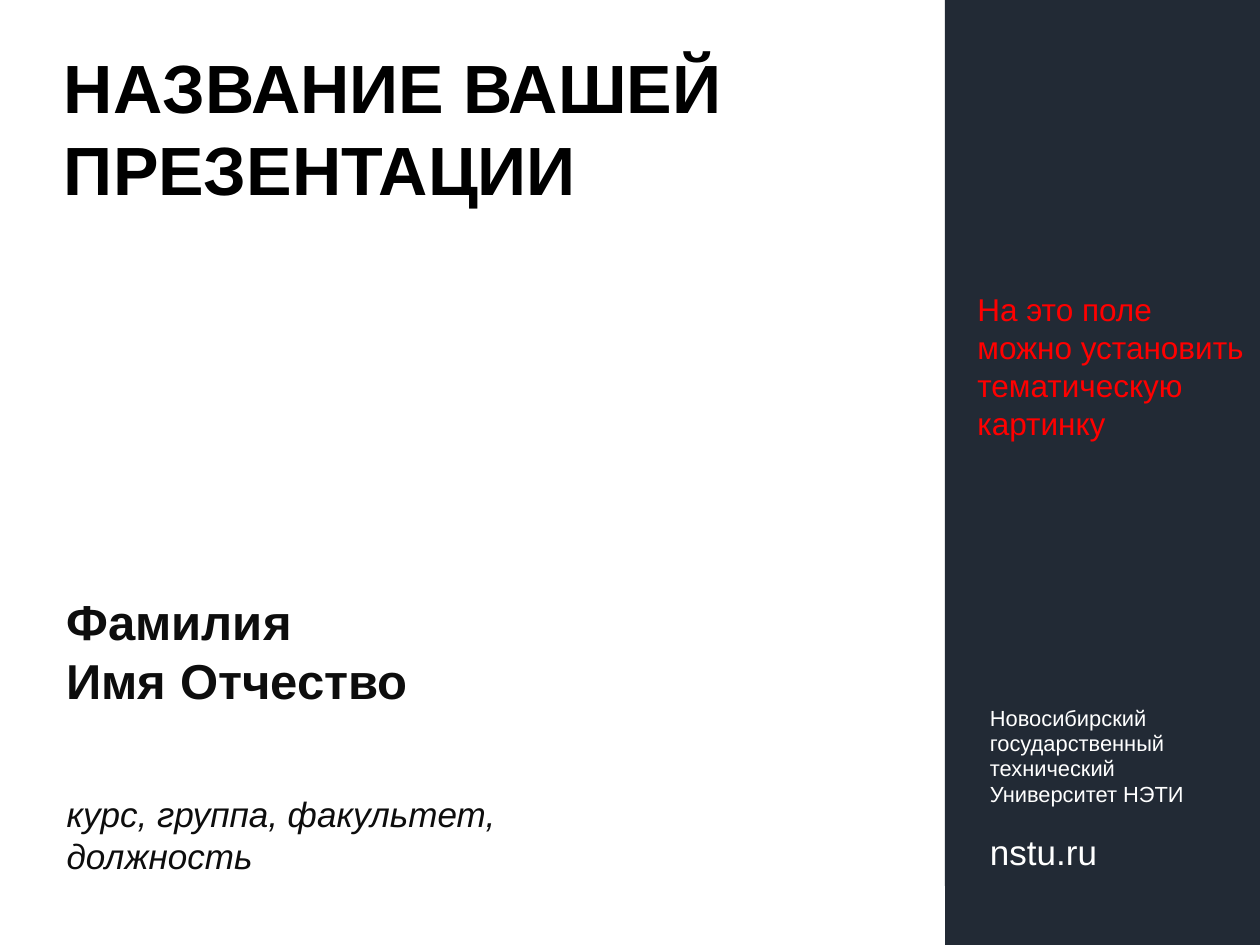
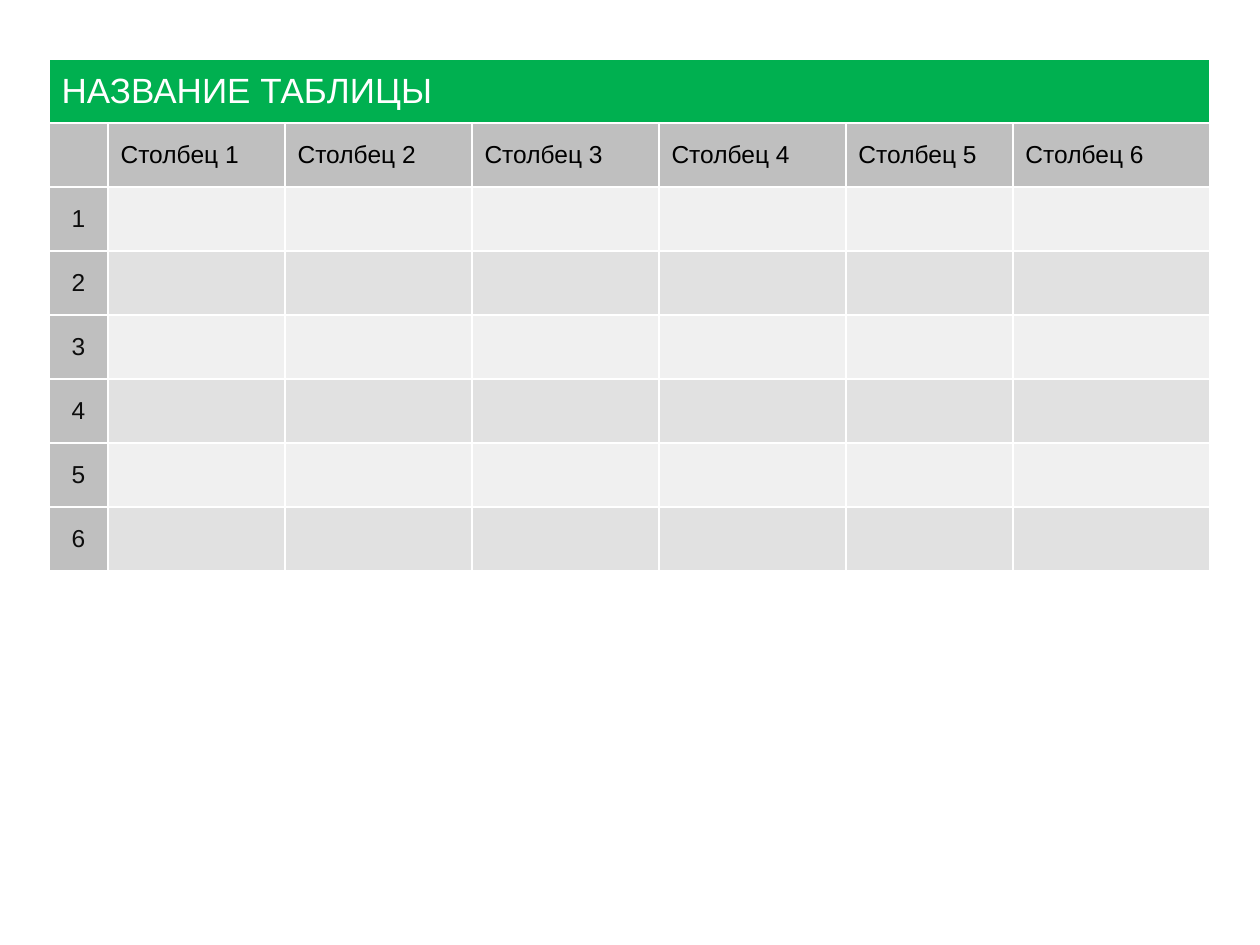
import lxml.etree
import pptx
import pptx.dml.color
import pptx.enum.shapes
import pptx.enum.text
import pptx.oxml.ns
import pptx.util

WHITE = pptx.dml.color.RGBColor(0xFF, 0xFF, 0xFF)
BLACK = pptx.dml.color.RGBColor(0x00, 0x00, 0x00)
INK = pptx.dml.color.RGBColor(0x0D, 0x0D, 0x0D)
NAVY = pptx.dml.color.RGBColor(0x22, 0x2A, 0x35)
RED = pptx.dml.color.RGBColor(0xFF, 0x00, 0x00)
GREEN = pptx.dml.color.RGBColor(0x00, 0xB0, 0x50)
HEADING_GREY = pptx.dml.color.RGBColor(0xBF, 0xBF, 0xBF)
ROW_GREYS = [
    pptx.dml.color.RGBColor(0xF0, 0xF0, 0xF0),
    pptx.dml.color.RGBColor(0xE1, 0xE1, 0xE1),
]
FONT = "Arial"
PX_PER_INCH = 126
TOP = pptx.enum.text.MSO_ANCHOR.TOP
LEFT = pptx.enum.text.PP_ALIGN.LEFT
CENTER = pptx.enum.text.PP_ALIGN.CENTER


def px(length):
    return pptx.util.Emu(round(length * 914400 / PX_PER_INCH))


def write(frame, text, size, colour, bold=False, align=LEFT):
    frame.text = text
    for paragraph in frame.paragraphs:
        paragraph.alignment = align
        for run in paragraph.runs:
            run.font.name = FONT
            run.font.size = pptx.util.Pt(size)
            run.font.bold = bold
            run.font.color.rgb = colour


deck = pptx.Presentation()
deck.slide_width = px(1260)
deck.slide_height = px(945)

cover = deck.slides.add_slide(deck.slide_layouts[1])
title, author = cover.placeholders
for placeholder, box in [(title, (64, 39, 742, 205)), (author, (54, 585, 620, 301))]:
    placeholder.left, placeholder.top, placeholder.width, placeholder.height = map(px, box)
    placeholder.text_frame.vertical_anchor = TOP
    placeholder.text_frame.auto_size = pptx.enum.text.MSO_AUTO_SIZE.NONE

write(title.text_frame, "НАЗВАНИЕ ВАШЕЙ ПРЕЗЕНТАЦИИ", 39, BLACK, bold=True)
title.text_frame.margin_left = 0

write(author.text_frame, "Фамилия\nИмя Отчество\nкурс, группа, факультет, должность", 28, INK, bold=True)
for paragraph in author.text_frame.paragraphs:
    properties = paragraph._p.get_or_add_pPr()
    properties.set("marL", "0")
    properties.set("indent", "0")
    lxml.etree.SubElement(properties, pptx.oxml.ns.qn("a:buNone"))
    paragraph.space_before = pptx.util.Pt(0)
position = author.text_frame.paragraphs[-1]
position.space_before = pptx.util.Pt(48)
position.runs[0].font.size = pptx.util.Pt(20)
position.runs[0].font.bold = False
position.runs[0].font.italic = True

for box, colour in [((945, 0, 315, 945), NAVY), ((0, 886, 945, 59), WHITE)]:
    band = cover.shapes.add_shape(pptx.enum.shapes.MSO_SHAPE.RECTANGLE, *map(px, box))
    band.shadow.inherit = False
    band.fill.solid()
    band.fill.fore_color.rgb = colour
    band.line.fill.background()

university = cover.shapes.add_textbox(px(990), px(703), px(217), px(195)).text_frame
university.word_wrap = True
university.margin_left = 0
write(university, "Новосибирский\nгосударственный\nтехнический\nУниверситет НЭТИ\nnstu.ru", 12.5, WHITE)
for paragraph in university.paragraphs:
    paragraph.line_spacing = 0.8
for paragraph in university.paragraphs[1:]:
    paragraph.space_before = pptx.util.Pt(2.5)
website = university.paragraphs[-1]
website.space_before = pptx.util.Pt(18.5)
website.runs[0].font.size = pptx.util.Pt(20)

hint = cover.shapes.add_textbox(px(965), px(284), px(295), px(165)).text_frame
hint.word_wrap = False
write(hint, "На это поле\nможно установить\nтематическую\nкартинку", 18, RED)

table_slide = deck.slides.add_slide(deck.slide_layouts[6])
column_widths = [59, 177, 187, 187, 187, 167, 197]
row_count, row_height = 8, 64
table = table_slide.shapes.add_table(
    row_count, len(column_widths), px(49), px(59), px(sum(column_widths)), px(row_count * row_height)
).table
for column, width in zip(table.columns, column_widths):
    column.width = px(width)
for row in table.rows:
    row.height = px(row_height)

for r in range(row_count):
    for c in range(len(column_widths)):
        cell = table.cell(r, c)
        cell.vertical_anchor = pptx.enum.text.MSO_ANCHOR.MIDDLE
        for side in ("lnL", "lnR", "lnT", "lnB"):
            border = lxml.etree.SubElement(
                cell._tc.get_or_add_tcPr(), pptx.oxml.ns.qn("a:" + side), w=str(pptx.util.Pt(1))
            )
            border_fill = lxml.etree.SubElement(border, pptx.oxml.ns.qn("a:solidFill"))
            lxml.etree.SubElement(border_fill, pptx.oxml.ns.qn("a:srgbClr"), val=str(WHITE))
        cell.fill.solid()
        if r == 0:
            cell.fill.fore_color.rgb = GREEN
        elif r == 1 or c == 0:
            cell.fill.fore_color.rgb = HEADING_GREY
        else:
            cell.fill.fore_color.rgb = ROW_GREYS[r % 2]

table.cell(0, 0).merge(table.cell(0, len(column_widths) - 1))
write(table.cell(0, 0).text_frame, "НАЗВАНИЕ ТАБЛИЦЫ", 20, WHITE)
for number in range(1, 7):
    write(table.cell(1, number).text_frame, f"Столбец {number}", 14, BLACK)
    write(table.cell(number + 1, 0).text_frame, str(number), 14, INK, align=CENTER)

deck.save("out.pptx")
